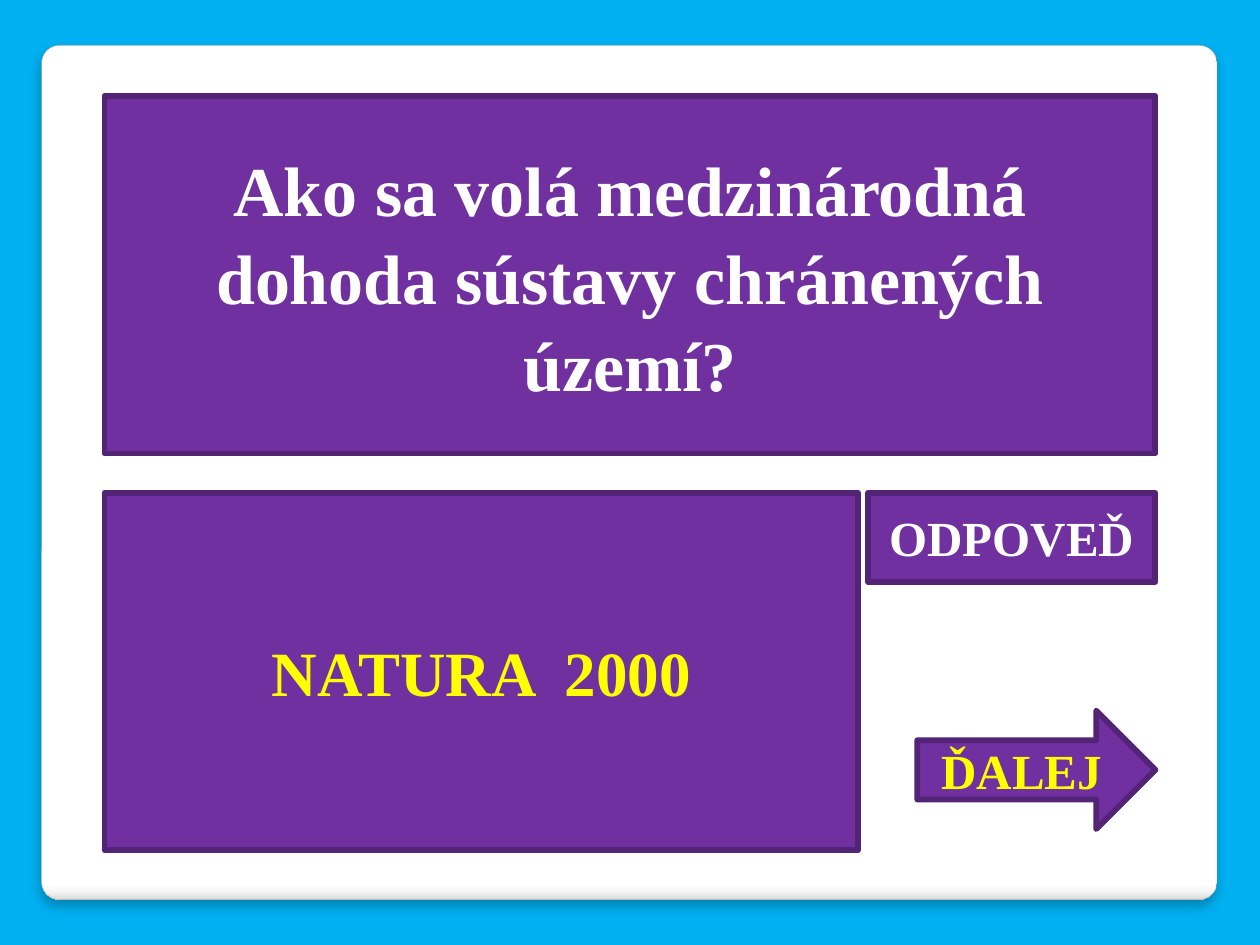
from lxml import etree
from pptx import Presentation, util as u
from pptx.dml.color import RGBColor
from pptx.enum import shapes, text
from pptx.oxml.ns import qn

SKY = RGBColor(0x00, 0xB0, 0xF0)
PURPLE = RGBColor(0x70, 0x30, 0xA0)
DARK_PURPLE = RGBColor(0x53, 0x24, 0x76)
WHITE = RGBColor(0xFF, 0xFF, 0xFF)
YELLOW = RGBColor(0xFF, 0xFF, 0x00)
GREY = RGBColor(0xA4, 0xA4, 0xA4)
PANEL_STOPS = [(0, WHITE), (98, WHITE),
               (99, RGBColor(0xF7, 0xF7, 0xF7)), (100, RGBColor(0xDA, 0xDA, 0xDA))]
KIND = shapes.MSO_SHAPE

# Margins and rows of the layout, in inches
WIDTH, HEIGHT = 10, 7.5
LEFT, RIGHT = 0.83, 9.17
TOP, BOX_H, GAP = 0.76, 2.84, 0.31
ANSWER_TOP = TOP + BOX_H + GAP

prs = Presentation()
prs.slide_width, prs.slide_height = u.Inches(WIDTH), u.Inches(HEIGHT)
s = prs.slides.add_slide(prs.slide_layouts[6])
s.background.fill.solid()
s.background.fill.fore_color.rgb = SKY


def add_shape(kind, left, top, width, height, line_color, line_width):
    sp = s.shapes.add_shape(kind, *map(u.Inches, (left, top, width, height)))
    sp.shadow.inherit = False
    sp.line.color.rgb = line_color
    sp.line.width = u.Pt(line_width)
    return sp


def add_color(parent, tag, color, **attrs):
    """Append an element holding an RGB colour and return the colour element."""
    el = etree.SubElement(parent, qn(tag), attrs)
    return etree.SubElement(el, qn("a:srgbClr"), val=str(color))


# White rounded panel: shaded bottom edge and a soft shadow
panel = add_shape(KIND.ROUNDED_RECTANGLE, 0.33, 0.36, 9.33, 6.78, GREY, 0.16)
panel.adjustments[0] = 0.021
panel.fill.gradient()
panel.fill.gradient_angle = 270
stops = panel._element.spPr.find(".//" + qn("a:gsLst"))
for stop in list(stops):
    stops.remove(stop)
for pos, color in PANEL_STOPS:
    add_color(stops, "a:gs", color, pos=str(pos * 1000))
effects = panel._element.spPr.find(qn("a:effectLst"))
shade = add_color(effects, "a:outerShdw", RGBColor(0, 0, 0), blurRad=str(u.Pt(6)),
                  dist=str(u.Pt(4)), dir="5400000", algn="tl", rotWithShape="0")
etree.SubElement(shade, qn("a:alpha"), val="25000")

# Quiz boxes: kind, width, top, height, right edge, wording, size, colour, spacing
boxes = [
    (KIND.RECTANGLE, RIGHT - LEFT, TOP, BOX_H, RIGHT,
     "Ako sa volá medzinárodná dohoda sústavy chránených území?", 40, WHITE, 1.04),
    (KIND.RECTANGLE, 5.98, ANSWER_TOP, BOX_H, LEFT + 5.98,
     "NATURA  2000", 36, YELLOW, 1),
    (KIND.RECTANGLE, 2.28, ANSWER_TOP, BOX_H / 4, RIGHT, "ODPOVEĎ", 28, WHITE, 1),
    (KIND.RIGHT_ARROW, 1.89, 5.64, 0.94, RIGHT, "ĎALEJ", 28, YELLOW, 1),
]
for kind, width, top, height, right, wording, size, color, spacing in boxes:
    sp = add_shape(kind, right - width, top, width, height, DARK_PURPLE, 3.35)
    sp.fill.solid()
    sp.fill.fore_color.rgb = PURPLE
    tf = sp.text_frame
    tf.word_wrap = True
    tf.vertical_anchor = text.MSO_ANCHOR.MIDDLE
    p = tf.paragraphs[0]
    p.text = wording
    p.alignment = text.PP_ALIGN.CENTER
    p.line_spacing = spacing
    p.font.name = "Times New Roman"
    p.font.size = u.Pt(size)
    p.font.bold = True
    p.font.color.rgb = color

prs.save("out.pptx")
